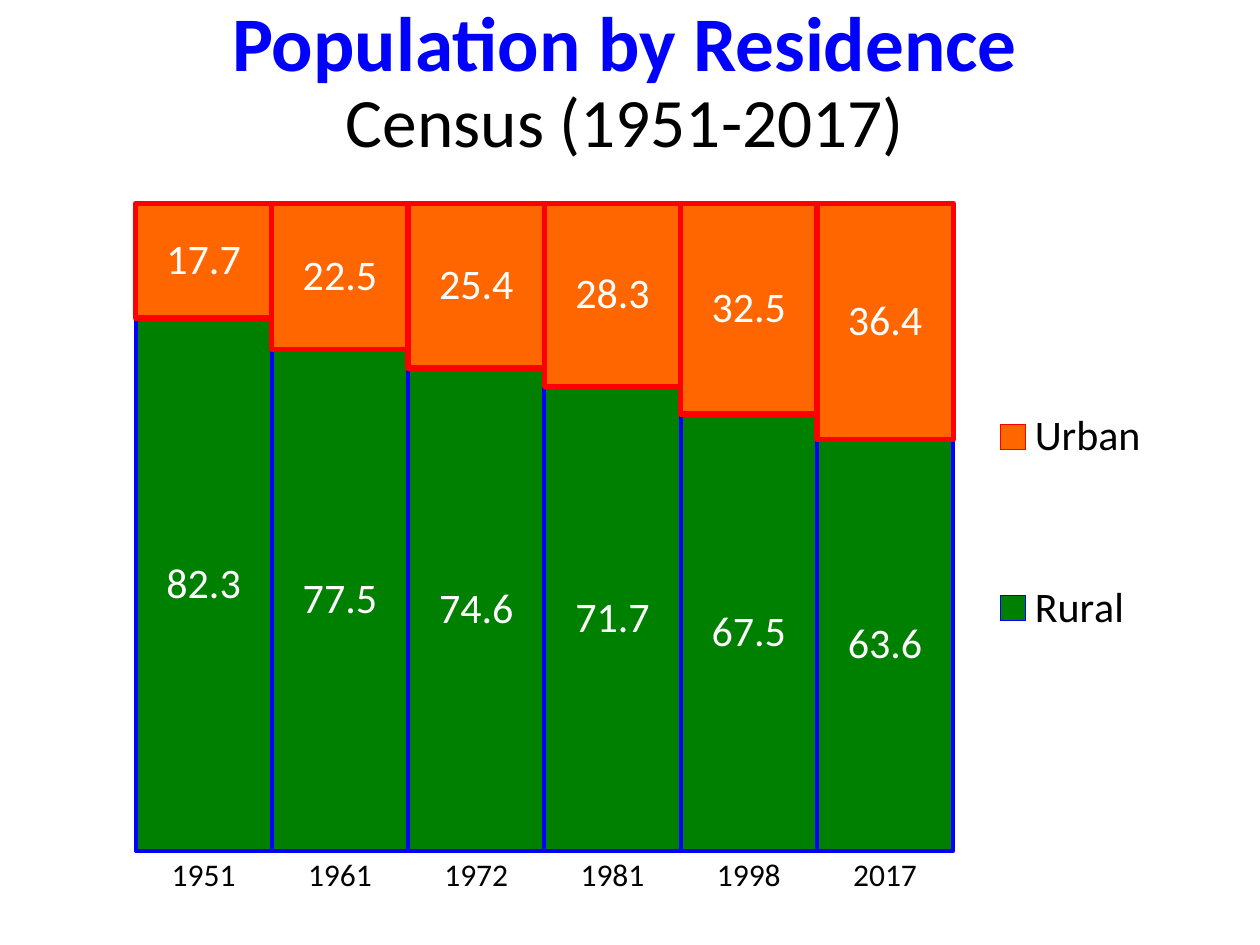
from lxml import etree
from pptx import Presentation
from pptx.chart.data import CategoryChartData
from pptx.dml.color import RGBColor
from pptx.enum import chart as ch, text
from pptx.oxml.ns import qn
from pptx.util import Inches, Pt

FONT = "Calibri"
YEARS = ["1951", "1961", "1972", "1981", "1998", "2017"]
# name, values, fill, line colour, line width
SERIES = [
    ("Rural", [82.3, 77.5, 74.6, 71.7, 67.5, 63.6], "008000", "0000FF", 2.25),
    ("Urban", [17.7, 22.5, 25.4, 28.3, 32.5, 36.4], "FF6600", "FF0000", 3),
]


def rgb(value):
    return RGBColor.from_string(value)


def style_font(font, size, color="000000", bold=False):
    font.name = FONT
    font.size = Pt(size)
    font.bold = bold
    font.color.rgb = rgb(color)


def add_run(p, content, **fmt):
    r = p.add_run()
    r.text = content
    style_font(r.font, **fmt)


def make_layout(x, y, w, h, inner=False):
    """Manual chart layout in fractions of the chart area."""
    layout = etree.Element(qn("c:layout"))
    manual = etree.SubElement(layout, qn("c:manualLayout"))
    items = [("layoutTarget", "inner")] if inner else []
    items += [("xMode", "edge"), ("yMode", "edge"),
              ("x", x), ("y", y), ("w", w), ("h", h)]
    for tag, value in items:
        etree.SubElement(manual, qn(f"c:{tag}")).set("val", str(value))
    return layout


def add_title(slide):
    sp = slide.shapes.add_textbox(Inches(0.25), Inches(0.08), Inches(9.42), Inches(1.17))
    tf = sp.text_frame
    tf.word_wrap = True
    tf.vertical_anchor = text.MSO_ANCHOR.MIDDLE
    p = tf.paragraphs[0]
    p.alignment = text.PP_ALIGN.CENTER
    p.line_spacing = 0.9
    add_run(p, "Population by Residence", size=44.1, color="0000FF", bold=True)
    p.add_line_break()
    add_run(p, "Census (1951-2017)", size=39.6)


def style_series(series, fill, line, width):
    series.format.fill.solid()
    series.format.fill.fore_color.rgb = rgb(fill)
    series.format.line.color.rgb = rgb(line)
    series.format.line.width = Pt(width)
    labels = series.data_labels
    labels.show_value = True
    labels.number_format = "#,##0.0"
    labels.number_format_is_linked = False
    style_font(labels.font, 24, "FFFFFF")


def add_legend(chart):
    chart.has_legend = True
    legend = chart.legend
    legend.position = ch.XL_LEGEND_POSITION.RIGHT
    legend.include_in_layout = False
    style_font(legend.font, 24)
    # Tall box, so that the two entries stand well apart
    el = legend._element
    for old in el.findall(qn("c:layout")):
        el.remove(old)
    el.find(qn("c:legendPos")).addnext(make_layout(0.83, 0.16, 0.16, 0.61))


def add_population_chart(slide):
    data = CategoryChartData(number_format="0.0")
    data.categories = YEARS
    for name, values, *_ in SERIES:
        data.add_series(name, values)
    chart = slide.shapes.add_chart(
        ch.XL_CHART_TYPE.COLUMN_STACKED_100, Inches(0.58), Inches(1.35),
        Inches(8.7), Inches(6.02), data).chart
    chart.has_title = False
    style_font(chart.font, 18)

    # Columns that touch each other
    plot = chart.plots[0]
    plot.gap_width = 0
    plot.overlap = 100
    plot.vary_by_categories = False
    for series, (_, _, *look) in zip(plot.series, SERIES):
        style_series(series, *look)

    # Axes
    cat = chart.category_axis
    cat.major_tick_mark = ch.XL_TICK_MARK.NONE
    cat.format.line.fill.background()
    style_font(cat.tick_labels.font, 18)
    val = chart.value_axis
    val.has_major_gridlines = False
    val.minimum_scale, val.maximum_scale = 0, 1
    val.visible = False

    # Plot area and legend
    area = chart._chartSpace.chart.plotArea
    for old in area.findall(qn("c:layout")):
        area.remove(old)
    area.insert(0, make_layout(0.057, 0.044, 0.746, 0.854, inner=True))
    add_legend(chart)


def main():
    prs = Presentation()
    prs.slide_width, prs.slide_height = Inches(10), Inches(7.5)
    slide = prs.slides.add_slide(prs.slide_layouts[6])
    add_title(slide)
    add_population_chart(slide)
    prs.save("out.pptx")


if __name__ == "__main__":
    main()
